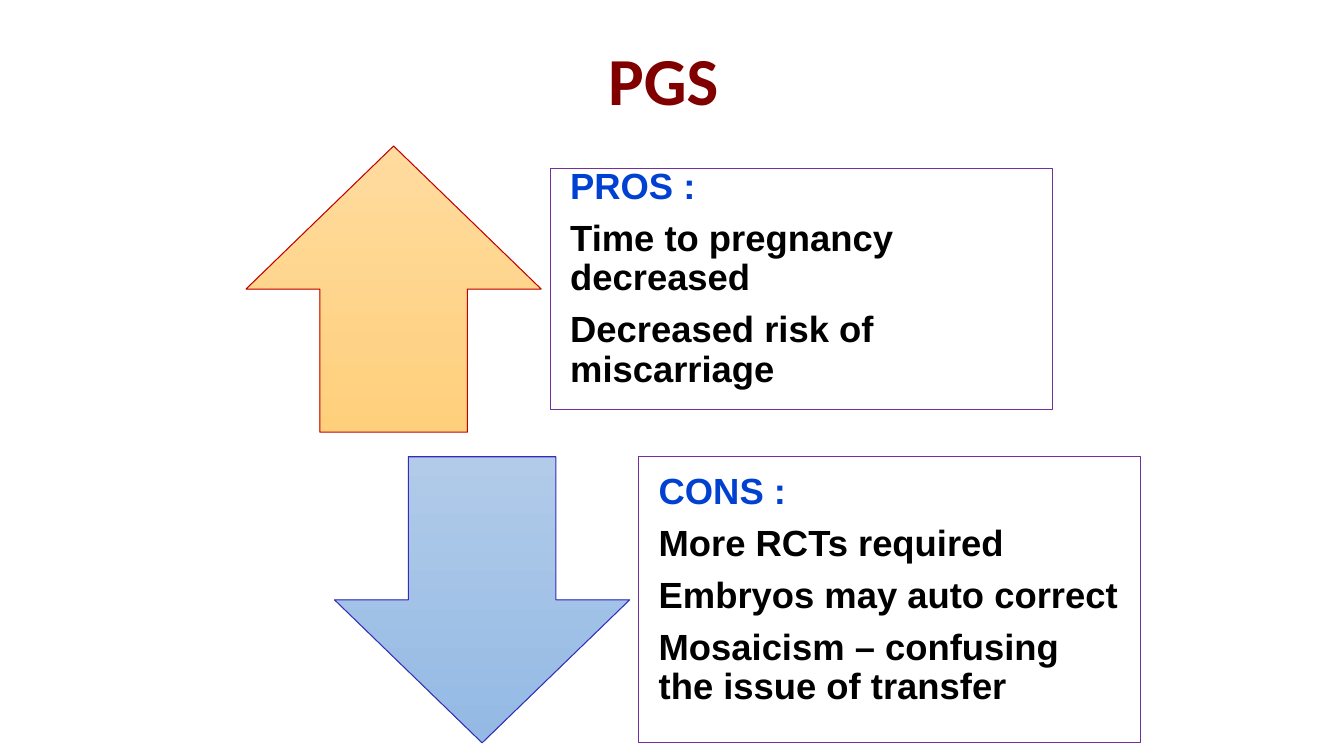
from pptx import Presentation
from pptx.dml.color import RGBColor
from pptx.enum.shapes import MSO_SHAPE
from pptx.enum.text import MSO_ANCHOR, PP_ALIGN
from pptx.util import Cm, Pt

ARROW_WIDTH = 7.44
ARROW_HEIGHT = 7.21
GAP = 0.23
PANEL_WIDTH = 12.65


def colour(hex_code):
    return RGBColor.from_string(hex_code)


def style_paragraph(paragraph, font_name, size, hex_code):
    paragraph.line_spacing = 0.9
    paragraph.font.name = font_name
    paragraph.font.size = Pt(size)
    paragraph.font.bold = True
    paragraph.font.color.rgb = colour(hex_code)


def outline(shape, hex_code):
    shape.shadow.inherit = False
    shape.line.color.rgb = colour(hex_code)
    shape.line.width = Pt(0.75)


def add_title(slide, left, top, width, height, wording):
    title = slide.shapes.add_textbox(Cm(left), Cm(top), Cm(width), Cm(height))
    frame = title.text_frame
    frame.word_wrap = True
    frame.margin_top = Cm(0.18)
    heading = frame.paragraphs[0]
    heading.text = wording
    heading.alignment = PP_ALIGN.CENTER
    style_paragraph(heading, "Calibri", 48, "800000")


def add_arrow(slide, left, top, preset, gradient, edge):
    arrow = slide.shapes.add_shape(
        preset, Cm(left), Cm(top), Cm(ARROW_WIDTH), Cm(ARROW_HEIGHT))
    arrow.fill.gradient()
    arrow.fill.gradient_angle = 270
    for stop, hex_code in zip(arrow.fill.gradient_stops, gradient):
        stop.color.rgb = colour(hex_code)
    outline(arrow, edge)


def add_panel(slide, left, top, height, heading, points):
    panel = slide.shapes.add_shape(
        MSO_SHAPE.RECTANGLE, Cm(left), Cm(top), Cm(PANEL_WIDTH), Cm(height))
    panel.fill.background()
    outline(panel, "7030A0")
    frame = panel.text_frame
    frame.word_wrap = True
    frame.vertical_anchor = MSO_ANCHOR.MIDDLE
    frame.margin_left = frame.margin_right = frame.margin_bottom = Cm(0.5)
    frame.margin_top = 0
    frame.text = "\n".join([heading, *points])
    for index, paragraph in enumerate(frame.paragraphs):
        paragraph.alignment = PP_ALIGN.LEFT
        paragraph.space_after = Pt(9.1)
        style_paragraph(paragraph, "Arial", 26, "000000" if index else "0041D2")


def add_argument(slide, left, top, preset, gradient, edge, panel_height,
                 heading, points):
    add_arrow(slide, left, top, preset, gradient, edge)
    add_panel(slide, left + ARROW_WIDTH + GAP,
              top + (ARROW_HEIGHT - panel_height) / 2, panel_height,
              heading, points)


def main():
    presentation = Presentation()
    presentation.slide_width = Cm(33.87)
    presentation.slide_height = Cm(19.05)
    slide = presentation.slides.add_slide(presentation.slide_layouts[6])

    add_title(slide, 2.11, 1.02, 29.21, 1.57, "PGS")
    add_argument(slide, 6.2, 3.68, MSO_SHAPE.UP_ARROW, ("FFDB9E", "FFD07C"),
                 "C00000", 6.07, "PROS :",
                 ["Time to pregnancy decreased",
                  "Decreased risk of miscarriage"])
    add_argument(slide, 8.43, 11.51, MSO_SHAPE.DOWN_ARROW, ("B1CBE9", "93B9E4"),
                 "352DB9", ARROW_HEIGHT, "CONS :",
                 ["More RCTs required",
                  "Embryos may auto correct",
                  "Mosaicism – confusing the issue of transfer"])

    presentation.save("out.pptx")


if __name__ == "__main__":
    main()
